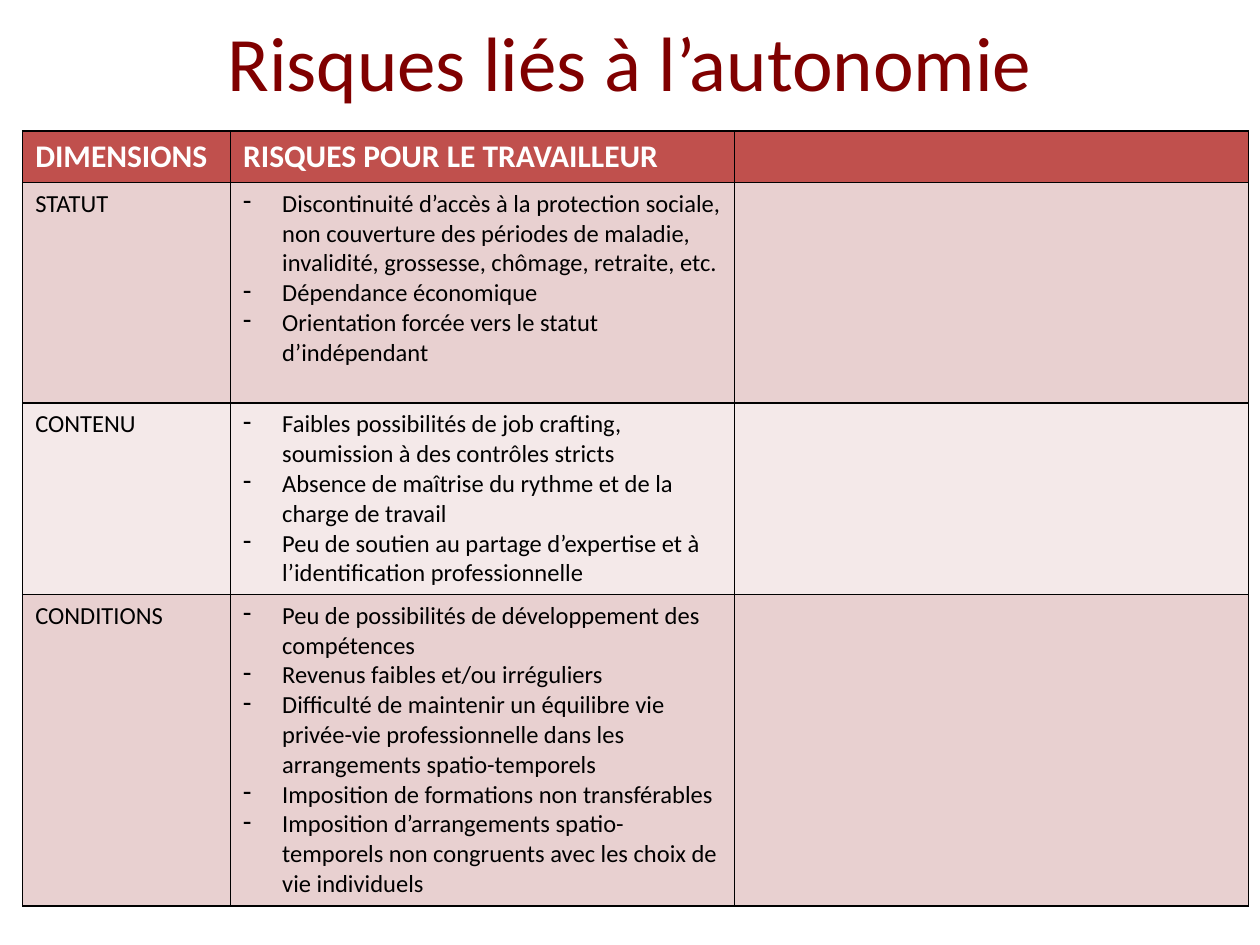
from dataclasses import dataclass

from lxml import etree
from pptx import Presentation, util as u
from pptx.dml.color import RGBColor
from pptx.enum import text as t
from pptx.oxml import ns


@dataclass(frozen=True)
class Theme:
    font: str = "Calibri"
    title: str = "800000"
    head: str = "C0504D"
    bands: tuple = ("E8D0D0", "F4E9E9")
    ink: str = "000000"
    light: str = "FFFFFF"
    big: int = 44
    mid: int = 18
    small: int = 14
    line: int = 1


def write(frame, lines, size, color, bold=False, align=None, dash=False):
    """Fill a text frame, one paragraph per line."""
    for i, line in enumerate(lines):
        par = frame.paragraphs[0] if i == 0 else frame.add_paragraph()
        par.alignment = align
        run = par.add_run()
        run.text = line
        font = run.font
        font.name, font.size, font.bold = THEME.font, u.Pt(size), bold
        font.color.rgb = RGBColor.from_string(color)
        if dash:
            props = par._p.get_or_add_pPr()
            indent = u.Inches(0.31)
            props.set("marL", str(indent))
            props.set("indent", str(-indent))
            etree.SubElement(props, ns.qn("a:buChar"), char="-")


class Deck:
    """Holds the theme and current slide; lengths are in grid units."""
    COLS, ROWS = 100, 75

    def __init__(self, theme):
        self.theme = theme
        self.prs = Presentation()
        self.prs.slide_width, self.prs.slide_height = u.Inches(10), u.Inches(7.5)
        self.slide = self.prs.slides.add_slide(self.prs.slide_layouts[6])

    def wide(self, cols):
        return round(self.prs.slide_width * cols / self.COLS)

    def high(self, rows):
        return round(self.prs.slide_height * rows / self.ROWS)

    def title(self, line, x, y, w, h):
        box = self.slide.shapes.add_textbox(
            self.wide(x), self.high(y), self.wide(w), self.high(h))
        frame = box.text_frame
        frame.word_wrap = True
        frame.vertical_anchor = t.MSO_ANCHOR.MIDDLE
        write(frame, [line], self.theme.big, self.theme.title,
              align=t.PP_ALIGN.CENTER)

    def border(self, cell):
        props = cell._tc.get_or_add_tcPr()
        for i, side in enumerate(("lnL", "lnR", "lnT", "lnB")):
            line = etree.Element(ns.qn("a:" + side),
                                 w=str(u.Pt(self.theme.line)))
            fill = etree.SubElement(line, ns.qn("a:solidFill"))
            etree.SubElement(fill, ns.qn("a:srgbClr"), val=self.theme.ink)
            props.insert(i, line)

    def cell(self, cell, fill, lines, **style):
        cell.fill.solid()
        cell.fill.fore_color.rgb = RGBColor.from_string(fill)
        self.border(cell)
        write(cell.text_frame, lines, **style)

    def table(self, x, y, cols, rows, head, body):
        th = self.theme
        grid = self.slide.shapes.add_table(
            len(rows), len(cols), self.wide(x), self.high(y),
            self.wide(sum(cols)), self.high(sum(rows))).table
        for col, w in zip(grid.columns, cols):
            col.width = self.wide(w)
        for row, h in zip(grid.rows, rows):
            row.height = self.high(h)
        # Header row
        for c, name in enumerate(head):
            self.cell(grid.cell(0, c), th.head, [name] if name else [],
                      size=th.mid, color=th.light, bold=True)
        # Banded body: label, dashed list, open column
        for r, (label, risks) in enumerate(body, 1):
            fill = th.bands[(r - 1) % 2]
            for c, lines in enumerate(([label], risks, [])):
                self.cell(grid.cell(r, c), fill, lines, size=th.small,
                          color=th.ink, dash=c == 1)


THEME = Theme()

HEAD = ("DIMENSIONS", "RISQUES POUR LE TRAVAILLEUR", "")
BODY = (
    ("STATUT", (
        "Discontinuité d’accès à la protection sociale, non couverture des "
        "périodes de maladie, invalidité, grossesse, chômage, retraite, etc.",
        "Dépendance économique",
        "Orientation forcée vers le statut d’indépendant")),
    ("CONTENU", (
        "Faibles possibilités de job crafting, soumission à des contrôles stricts",
        "Absence de maîtrise du rythme et de la charge de travail",
        "Peu de soutien au partage d’expertise et à l’identification "
        "professionnelle")),
    ("CONDITIONS", (
        "Peu de possibilités de développement des compétences",
        "Revenus faibles et/ou irréguliers",
        "Difficulté de maintenir un équilibre vie privée-vie professionnelle "
        "dans les arrangements spatio-temporels",
        "Imposition de formations non transférables",
        "Imposition d’arrangements spatio-temporels non congruents avec les "
        "choix de vie individuels")),
)


def main():
    deck = Deck(THEME)
    deck.title("Risques liés à l’autonomie", x=5, y=0.1, w=90, h=9.4)
    deck.table(x=1.8, y=10.4, cols=(16.5, 40, 40.8),
               rows=(4.1, 17.5, 15.2, 24.7), head=HEAD, body=BODY)
    deck.prs.save("out.pptx")


if __name__ == "__main__":
    main()
